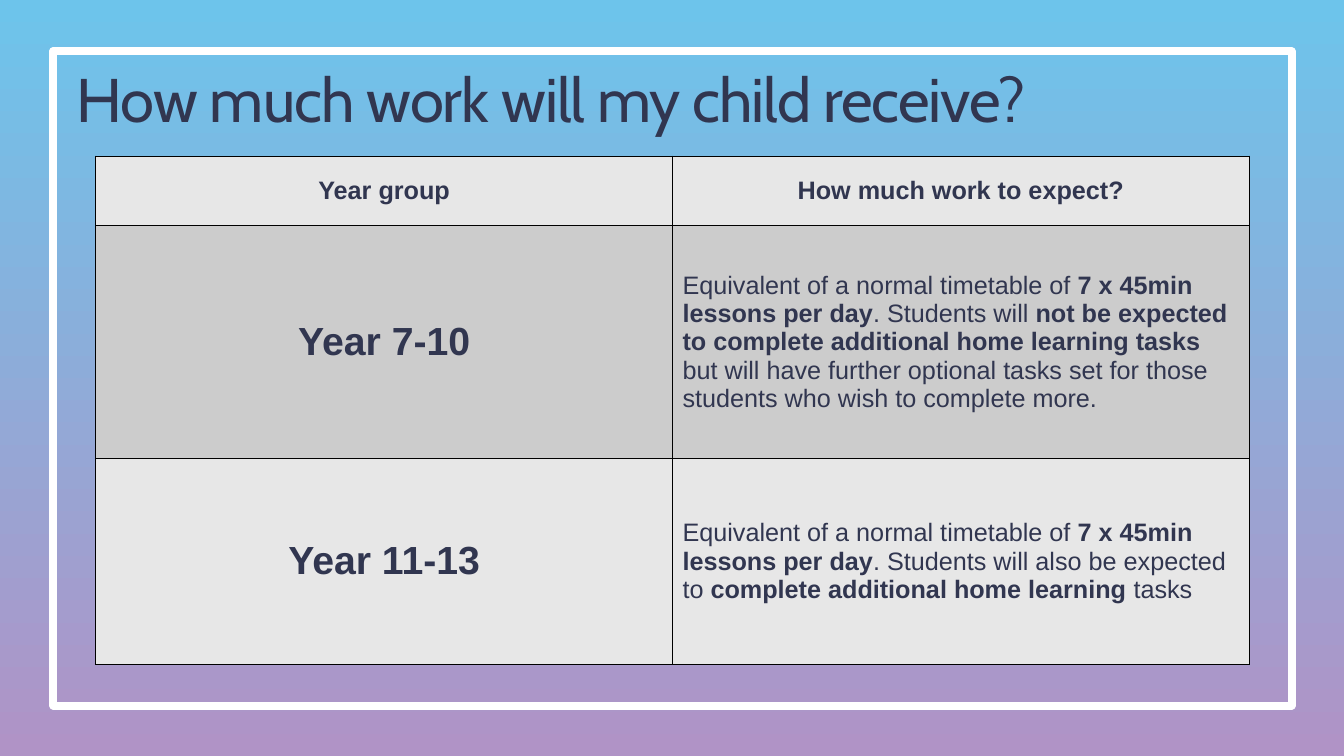
from lxml.etree import SubElement
from pptx import Presentation
from pptx.dml.color import RGBColor
from pptx.enum.shapes import MSO_SHAPE
from pptx.enum.text import MSO_ANCHOR, MSO_AUTO_SIZE, PP_ALIGN
from pptx.oxml.ns import qn
from pptx.util import Emu, Pt

PX = 9144  # EMU per px, 100 px to the inch
COLORS = {
    "sky": "6DC4EB",
    "violet": "B093C6",
    "frame": "FFFFFF",
    "ink": "313650",
    "light": "E7E7E7",
    "dark": "CCCCCC",
    "border": "000000",
}

# Each cell holds (text, bold) runs
HEADINGS = [[("Year group", True)], [("How much work to expect?", True)]]
YEAR_ROWS = [
    [
        [("Year 7-10", True)],
        [
            ("Equivalent of a normal timetable of ", False),
            ("7 x 45min lessons per day", True),
            (". Students will ", False),
            ("not be expected to complete additional home learning tasks ", True),
            ("but will have further optional tasks set for those students "
             "who wish to complete more.", False),
        ],
    ],
    [
        [("Year 11-13", True)],
        [
            ("Equivalent of a normal timetable of ", False),
            ("7 x 45min lessons per day", True),
            (". Students will also be expected to ", False),
            ("complete additional home learning ", True),
            ("tasks", False),
        ],
    ],
]
COLUMN_WIDTHS = [572, 572]
ROW_HEIGHTS = [69, 231, 204]


def px(*lengths):
    return [Emu(length * PX) for length in lengths]


def color(name):
    return RGBColor.from_string(COLORS[name])


def style_run(run, font_name, size, bold=False):
    run.font.name = font_name
    run.font.size = Pt(size)
    run.font.bold = bold
    run.font.color.rgb = color("ink")


def paint_background(slide):
    fill = slide.background.fill
    fill.gradient()
    fill.gradient_angle = 270
    for stop, name in zip(fill.gradient_stops, ("sky", "violet")):
        stop.color.rgb = color(name)


def add_frame(slide, box):
    frame = slide.shapes.add_shape(MSO_SHAPE.RECTANGLE, *px(*box))
    frame.shadow.inherit = False
    frame.fill.background()
    frame.line.color.rgb = color("frame")
    frame.line.width = Pt(5.7)


def set_title(slide, text, box):
    title = slide.shapes.title
    title.left, title.top, title.width, title.height = px(*box)
    text_frame = title.text_frame
    text_frame.text = text
    text_frame.word_wrap = True
    text_frame.auto_size = MSO_AUTO_SIZE.NONE
    text_frame.vertical_anchor = MSO_ANCHOR.MIDDLE
    heading = text_frame.paragraphs[0]
    heading.alignment = PP_ALIGN.LEFT
    heading.line_spacing = 0.9
    style_run(heading.runs[0], "Cabin", 44)
    heading.runs[0].font._element.set("spc", "-70")


def add_borders(cell):
    properties = cell._tc.get_or_add_tcPr()
    for side in ("lnL", "lnR", "lnT", "lnB"):
        border = SubElement(properties, qn(f"a:{side}"), w=str(Pt(1)))
        solid = SubElement(border, qn("a:solidFill"))
        SubElement(solid, qn("a:srgbClr"), val=COLORS["border"])


def fill_cell(cell, pieces, size, alignment, fill_name):
    add_borders(cell)
    cell.fill.solid()
    cell.fill.fore_color.rgb = color(fill_name)
    cell.vertical_anchor = MSO_ANCHOR.MIDDLE
    paragraph = cell.text_frame.paragraphs[0]
    paragraph.alignment = alignment
    for text, bold in pieces:
        run = paragraph.add_run()
        run.text = text
        style_run(run, "Arial", size, bold)


def add_work_table(slide, left, top):
    rows = [HEADINGS] + YEAR_ROWS
    box = px(left, top, sum(COLUMN_WIDTHS), sum(ROW_HEIGHTS))
    table = slide.shapes.add_table(len(rows), len(COLUMN_WIDTHS), *box).table
    for column, width in zip(table.columns, px(*COLUMN_WIDTHS)):
        column.width = width
    for row, height in zip(table.rows, px(*ROW_HEIGHTS)):
        row.height = height
    for r, cells in enumerate(rows):
        for c, pieces in enumerate(cells):
            is_year = r > 0 and c == 0
            is_description = r > 0 and c == 1
            fill_cell(
                table.cell(r, c),
                pieces,
                28 if is_year else 18,
                PP_ALIGN.LEFT if is_description else PP_ALIGN.CENTER,
                "dark" if r % 2 else "light",
            )


def main():
    deck = Presentation()
    deck.slide_width, deck.slide_height = px(1333, 750)
    slide = deck.slides.add_slide(deck.slide_layouts[5])

    # Backdrop
    paint_background(slide)
    add_frame(slide, (53, 51, 1228, 649))

    # Content
    set_title(slide, "How much work will my child receive?", (66, 63, 1144, 77))
    add_work_table(slide, 95, 155)

    deck.save("out.pptx")


if __name__ == "__main__":
    main()
